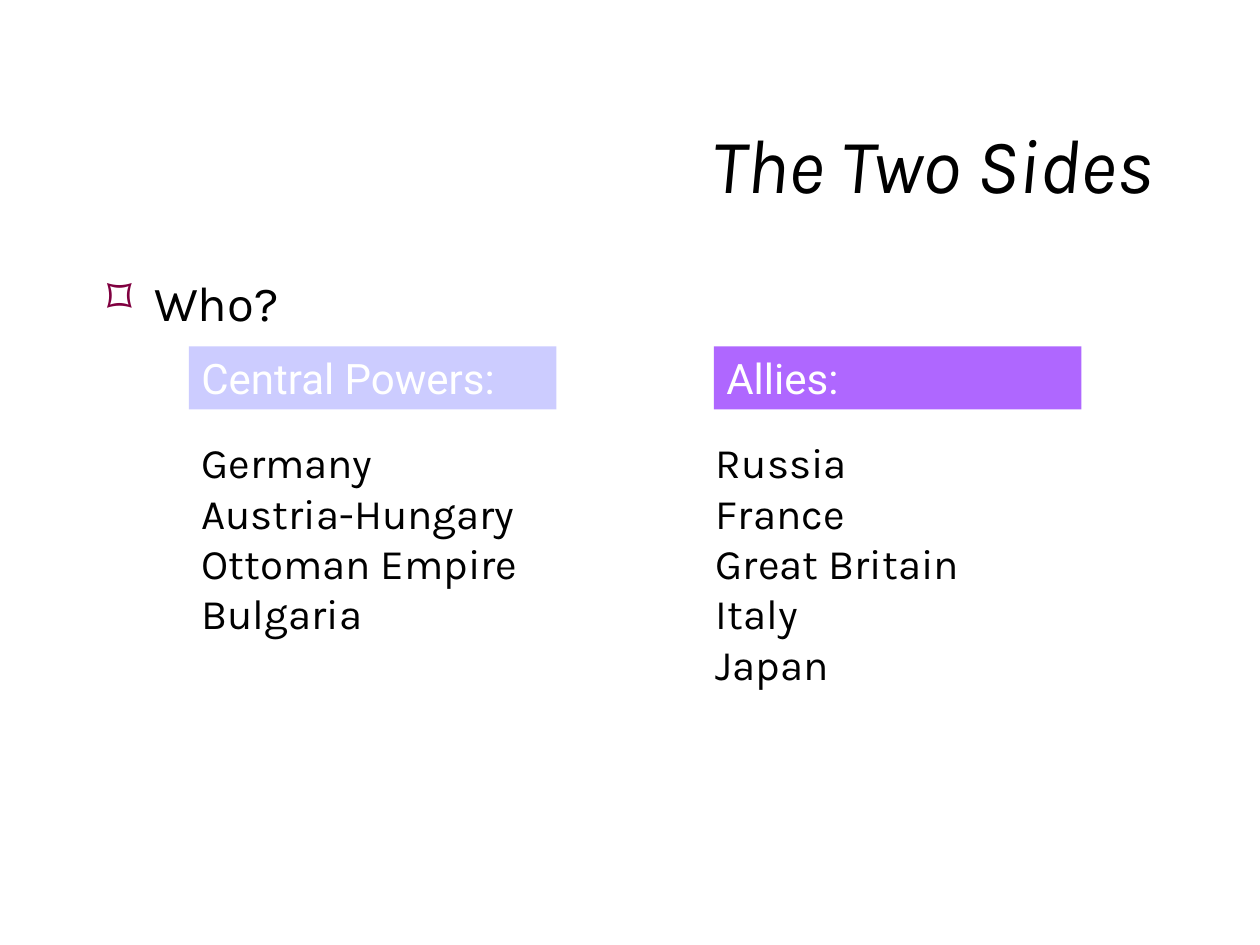
import pptx
import pptx.util
import pptx.dml.color
import pptx.enum.shapes
import pptx.enum.text
import lxml.etree

Pt = pptx.util.Pt
RGBColor = pptx.dml.color.RGBColor
PP_ALIGN = pptx.enum.text.PP_ALIGN
MSO_ANCHOR = pptx.enum.text.MSO_ANCHOR

BLACK = RGBColor(0x00, 0x00, 0x00)
WHITE = RGBColor(0xFF, 0xFF, 0xFF)
LAVENDER = RGBColor(0xCC, 0xCC, 0xFF)
PURPLE = RGBColor(0xAF, 0x67, 0xFF)
MAROON = RGBColor(0x80, 0x00, 0x40)

# Content
TITLE = "The Two Sides"
QUESTION = "Who?"
# heading, heading fill, heading left, list left, list height, countries
SIDES = [
    ("Central Powers:", LAVENDER, 108, 108, 124,
     ["Germany", "Austria-Hungary", "Ottoman Empire", "Bulgaria"]),
    ("Allies:", PURPLE, 408, 402, 152.5,
     ["Russia", "France", "Great Britain", "Italy", "Japan"]),
]

HEAD_TOP, HEAD_W, HEAD_H = 198, 210, 36
LIST_TOP, LIST_W = 246, 264


def write(sp, lines, font, size, color, anchor=MSO_ANCHOR.TOP,
          align=PP_ALIGN.LEFT, italic=False):
    tf = sp.text_frame
    tf.word_wrap = True
    tf.vertical_anchor = anchor
    tf.text = "\n".join(lines)
    for p in tf.paragraphs:
        p.alignment = align
        for r in p.runs:
            r.font.name = font
            r.font.size = Pt(size)
            r.font.color.rgb = color
            r.font.italic = italic
    return tf


def add_text(slide, left, top, width, height):
    return slide.shapes.add_textbox(Pt(left), Pt(top), Pt(width), Pt(height))


def add_box(slide, left, top, width, height, fill):
    sp = slide.shapes.add_shape(pptx.enum.shapes.MSO_SHAPE.RECTANGLE,
                                Pt(left), Pt(top), Pt(width), Pt(height))
    sp.shadow.inherit = False
    sp.fill.solid()
    sp.fill.fore_color.rgb = fill
    sp.line.fill.background()
    return sp


def add_bullet(p, char, color, indent):
    pPr = p._p.get_or_add_pPr()
    pPr.set("marL", str(Pt(indent)))
    pPr.set("indent", str(-Pt(indent)))
    qn = pptx.oxml.ns.qn
    clr = lxml.etree.SubElement(pPr, qn("a:buClr"))
    lxml.etree.SubElement(clr, qn("a:srgbClr"), val=str(color))
    lxml.etree.SubElement(pPr, qn("a:buChar"), char=char)


def main():
    prs = pptx.Presentation()
    prs.slide_width, prs.slide_height = Pt(720), Pt(540)
    slide = prs.slides.add_slide(prs.slide_layouts[6])

    # Title
    write(add_text(slide, 54, 48, 612, 90), [TITLE], "Karla", 44, BLACK,
          MSO_ANCHOR.MIDDLE, PP_ALIGN.RIGHT, italic=True)

    # Bulleted question
    tf = write(add_text(slide, 54, 156, 612, 42), [QUESTION], "Karla", 28, BLACK)
    p = tf.paragraphs[0]
    p.line_spacing = 0.9
    add_bullet(p, "⌑", MAROON, 27)

    # Heading and country list of each side
    for heading, fill, head_left, list_left, list_h, countries in SIDES:
        sp = add_box(slide, head_left, HEAD_TOP, HEAD_W, HEAD_H, fill)
        write(sp, [heading], "Roboto", 24, WHITE)
        sp = add_box(slide, list_left, LIST_TOP, LIST_W, list_h, WHITE)
        write(sp, countries, "Karla", 24, BLACK)

    prs.save("out.pptx")


if __name__ == "__main__":
    main()
